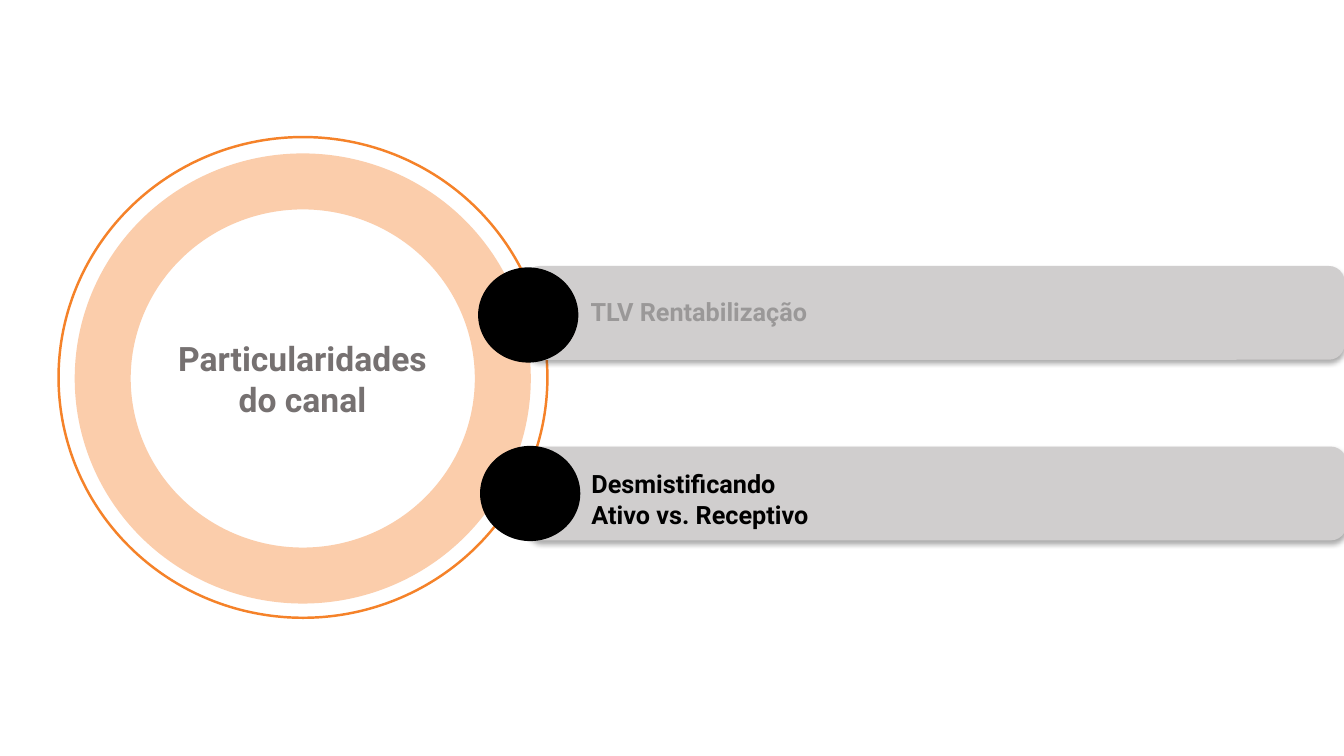
import pptx
import pptx.util
import pptx.dml.color
import pptx.enum.shapes
import pptx.enum.text
import pptx.oxml.ns
import lxml.etree
from dataclasses import dataclass

Pt = pptx.util.Pt
SHAPES = pptx.enum.shapes.MSO_SHAPE

TITLE = "Particularidades do canal"
# lines, text opacity in percent, bar, dot and label (left, top, width, height)
TOPICS = [
    (["Desmistificando", "Ativo vs. Receptivo"], 100,
     (375.8, 319, 586, 67), (343.4, 319, 70.6, 67), (415.4, 331.2, 500, 51)),
    (["TLV Rentabilização"], 25,
     (374.4, 190, 586, 67), (342, 191.5, 70.6, 67), (414.7, 208, 500, 29)),
]
# left, top, width, height, line width, theme colour
RINGS = [
    (73.4, 129.6, 285.8, 281.5, 40, "ring"),
    (41.8, 97.9, 349.2, 343.4, 1.75, "outline"),
]
TITLE_AREA = (113.8, 237.6, 204.5, 65.5)


@dataclass(frozen=True)
class Theme:
    font: str = "Roboto"
    title_size: float = 24
    label_size: float = 18
    title: str = "767171"
    ink: str = "000000"
    bar: str = "D0CECE"
    ring: str = "FBCDAB"
    outline: str = "F58229"


THEME = Theme()


def rgb(value):
    return pptx.dml.color.RGBColor.from_string(value)


def add_shape(slide, kind, area, fill=None, line=None, line_width=1):
    shape = slide.shapes.add_shape(kind, *map(Pt, area))
    shape.shadow.inherit = False
    if fill:
        shape.fill.solid()
        shape.fill.fore_color.rgb = rgb(fill)
    else:
        shape.fill.background()
    if line:
        shape.line.color.rgb = rgb(line)
        shape.line.width = Pt(line_width)
    else:
        shape.line.fill.background()
    return shape


def add_alpha(color, percent):
    lxml.etree.SubElement(color, pptx.oxml.ns.qn("a:alpha"), val=str(percent * 1000))


def add_drop_shadow(shape):
    qn = pptx.oxml.ns.qn
    effects = shape._element.spPr.find(qn("a:effectLst"))
    shadow = lxml.etree.SubElement(
        effects, qn("a:outerShdw"), blurRad=str(Pt(3.5)), dist=str(Pt(2.2)),
        dir="5400000", algn="t", rotWithShape="0")
    color = lxml.etree.SubElement(shadow, qn("a:srgbClr"), val=THEME.ink)
    add_alpha(color, 32)


def write_lines(box, lines, size, color, opacity=100):
    frame = box.text_frame
    frame.word_wrap = True
    frame.text = "\n".join(lines)
    for para in frame.paragraphs:
        para.font.name = THEME.font
        para.font.size = Pt(size)
        para.font.bold = True
        para.font.color.rgb = rgb(color)
        if opacity < 100:
            for node in para._p.iter(pptx.oxml.ns.qn("a:srgbClr")):
                add_alpha(node, opacity)
    return frame


def add_title(slide):
    title = slide.shapes.title
    title.left, title.top, title.width, title.height = map(Pt, TITLE_AREA)
    frame = write_lines(title, [TITLE], THEME.title_size, THEME.title)
    frame.auto_size = pptx.enum.text.MSO_AUTO_SIZE.NONE
    frame.vertical_anchor = pptx.enum.text.MSO_ANCHOR.MIDDLE
    frame.paragraphs[0].alignment = pptx.enum.text.PP_ALIGN.CENTER


def add_topic(slide, lines, opacity, bar_area, dot_area, label_area):
    bar = add_shape(slide, SHAPES.ROUNDED_RECTANGLE, bar_area, fill=THEME.bar)
    add_drop_shadow(bar)
    add_shape(slide, SHAPES.OVAL, dot_area, fill=THEME.ink, line=THEME.ink)
    label = slide.shapes.add_textbox(*map(Pt, label_area))
    frame = write_lines(label, lines, THEME.label_size, THEME.ink, opacity)
    frame.auto_size = pptx.enum.text.MSO_AUTO_SIZE.SHAPE_TO_FIT_TEXT


def main():
    deck = pptx.Presentation()
    deck.slide_width, deck.slide_height = Pt(960), Pt(540)
    slide = deck.slides.add_slide(deck.slide_layouts.get_by_name("Title Only"))
    add_title(slide)
    for *area, width, color in RINGS:
        add_shape(slide, SHAPES.OVAL, area, line=getattr(THEME, color), line_width=width)
    for topic in TOPICS:
        add_topic(slide, *topic)
    deck.save("out.pptx")


if __name__ == "__main__":
    main()
